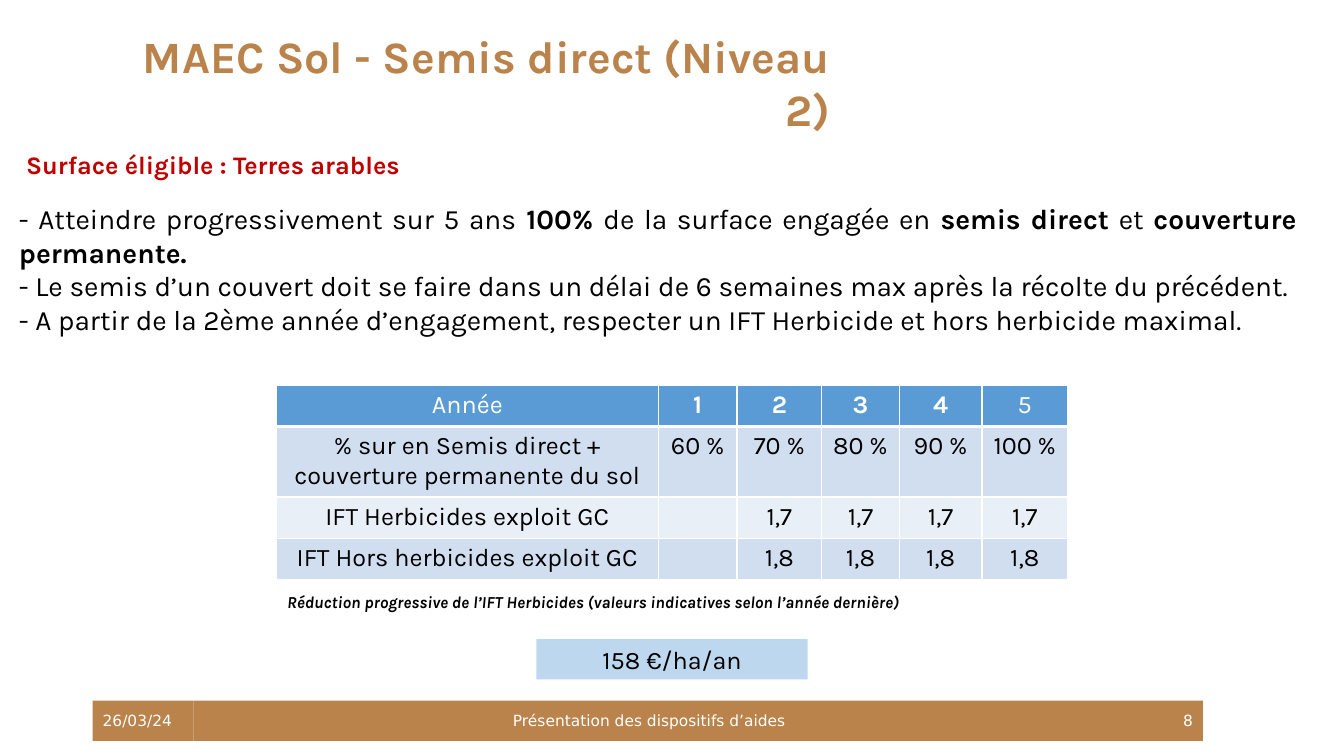
from lxml import etree
from pptx import Presentation
from pptx.dml.color import RGBColor
from pptx.enum.shapes import MSO_SHAPE
from pptx.enum.text import MSO_ANCHOR, MSO_AUTO_SIZE, PP_ALIGN
from pptx.oxml import parse_xml
from pptx.oxml.ns import nsdecls
from pptx.util import Inches, Pt

COLORS = {
    "brown": "BA834B", "red": "C00000", "black": "000000", "white": "FFFFFF",
    "header": "5B9BD5", "band": "D0DEEF", "light_band": "E9EFF7", "amount": "BDD7EE",
}
BODY_FONT = "Karla"
FOOTER_FONT = "DejaVu Sans"

REQUIREMENTS = [
    [("- Atteindre progressivement sur 5 ans ", False), ("100% ", True),
     ("de la surface engagée en ", False), ("semis direct", True), (" et ", False),
     ("couverture permanente.", True)],
    [("- Le semis d’un couvert doit se faire dans un délai de 6 semaines max "
      "après la récolte du précédent.", False)],
    [("- A partir de la 2ème année d’engagement, respecter un IFT Herbicide "
      "et hors herbicide maximal.", False)],
]
TARGETS = [
    ["Année", "1", "2", "3", "4", "5"],
    ["% sur en Semis direct + couverture permanente du sol",
     "60 %", "70 %", "80 %", "90 %", "100 %"],
    ["IFT Herbicides exploit GC", ""] + ["1,7"] * 4,
    ["IFT Hors herbicides exploit GC", ""] + ["1,8"] * 4,
]
COLUMN_WIDTHS = [3.79, 0.78, 0.84, 0.77, 0.82, 0.85]
ROW_HEIGHTS = [0.41, 0.69, 0.41, 0.41]
ROW_FILLS = ["header", "band", "light_band", "band"]
FOOTER = [
    (0.92, 1, "26/03/24", PP_ALIGN.LEFT),
    (1.92, 9.04, "Présentation des dispositifs d’aides", PP_ALIGN.CENTER),
    (10.96, 0.97, "8", PP_ALIGN.RIGHT),
]


def rgb(name):
    return RGBColor.from_string(COLORS[name])


def format_font(font, size, color, bold=False, italic=False, name=BODY_FONT):
    font.name, font.size = name, Pt(size)
    font.bold, font.italic = bold, italic
    font.color.rgb = rgb(color)


def write(text_frame, text, size, color, align=PP_ALIGN.LEFT, **style):
    """Fill a frame with one paragraph in a single style."""
    text_frame.text = text
    paragraph = text_frame.paragraphs[0]
    paragraph.alignment = align
    for run in paragraph.runs:
        format_font(run.font, size, color, **style)


def add_text(slide, left, top, width, height):
    box = slide.shapes.add_textbox(Inches(left), Inches(top), Inches(width), Inches(height))
    box.text_frame.word_wrap = True
    return box.text_frame


def add_block(slide, left, top, width, height, fill, anchor):
    block = slide.shapes.add_shape(
        MSO_SHAPE.RECTANGLE, Inches(left), Inches(top), Inches(width), Inches(height))
    block.shadow.inherit = False
    block.fill.solid()
    block.fill.fore_color.rgb = rgb(fill)
    block.line.fill.background()
    block.text_frame.vertical_anchor = anchor
    return block.text_frame


def set_title(slide):
    title = slide.shapes.title
    title.left, title.top = Inches(0.92), Inches(0.23)
    title.width, title.height = Inches(7.42), Inches(0.64)
    frame = title.text_frame
    frame.auto_size = MSO_AUTO_SIZE.NONE
    frame.vertical_anchor = MSO_ANCHOR.TOP
    write(frame, "MAEC Sol - Semis direct (Niveau 2)", 32, "brown", PP_ALIGN.RIGHT, bold=True)


def add_requirements(slide):
    frame = add_text(slide, 0.09, 1.95, 12.87, 1.45)
    for index, pieces in enumerate(REQUIREMENTS):
        paragraph = frame.add_paragraph() if index else frame.paragraphs[0]
        paragraph.alignment = PP_ALIGN.JUSTIFY
        for text, bold in pieces:
            run = paragraph.add_run()
            run.text = text
            format_font(run.font, 20, "black", bold)


def set_borders(cell, top, bottom):
    """Draw white borders, with the top and bottom widths in points."""
    properties = cell._tc.get_or_add_tcPr()
    widths = {"lnL": 1, "lnR": 1, "lnT": top, "lnB": bottom}
    for position, (tag, width) in enumerate(widths.items()):
        line = parse_xml(f'<a:{tag} {nsdecls("a")} w="{Pt(width)}"/>')
        fill = etree.SubElement(line, line.tag.replace(tag, "solidFill"))
        etree.SubElement(fill, line.tag.replace(tag, "srgbClr"), val=COLORS["white"])
        properties.insert(position, line)


def add_targets(slide):
    table = slide.shapes.add_table(
        len(TARGETS), len(COLUMN_WIDTHS), Inches(2.74), Inches(3.82),
        Inches(sum(COLUMN_WIDTHS)), Inches(sum(ROW_HEIGHTS))).table
    for column, width in zip(table.columns, COLUMN_WIDTHS):
        column.width = Inches(width)
    for row_index, texts in enumerate(TARGETS):
        table.rows[row_index].height = Inches(ROW_HEIGHTS[row_index])
        is_header = row_index == 0
        for column_index, text in enumerate(texts):
            cell = table.cell(row_index, column_index)
            cell.fill.solid()
            cell.fill.fore_color.rgb = rgb(ROW_FILLS[row_index])
            set_borders(cell, 3 if row_index == 1 else 1, 3 if is_header else 1)
            write(cell.text_frame, text, 18, "white" if is_header else "black",
                  PP_ALIGN.CENTER, bold=is_header and text in "1234")


def add_footer(slide):
    for left, width, text, align in FOOTER:
        frame = add_block(slide, left, 6.95, width, 0.4, "brown", MSO_ANCHOR.MIDDLE)
        write(frame, text, 11, "white", align, name=FOOTER_FONT)


def main():
    presentation = Presentation()
    presentation.slide_width, presentation.slide_height = Inches(13.33), Inches(7.5)
    slide = presentation.slides.add_slide(presentation.slide_layouts[5])
    add_footer(slide)
    set_title(slide)
    write(add_text(slide, 0.16, 1.43, 5.79, 0.4),
          "Surface éligible : Terres arables", 18, "red", bold=True)
    add_requirements(slide)
    add_targets(slide)
    write(add_block(slide, 5.32, 6.34, 2.69, 0.4, "amount", MSO_ANCHOR.TOP),
          "158 €/ha/an", 18, "black", PP_ALIGN.CENTER)
    write(add_text(slide, 2.75, 5.82, 8.06, 0.3),
          "Réduction progressive de l’IFT Herbicides (valeurs indicatives selon l’année dernière)",
          12, "black", bold=True, italic=True)
    presentation.save("out.pptx")


if __name__ == "__main__":
    main()
